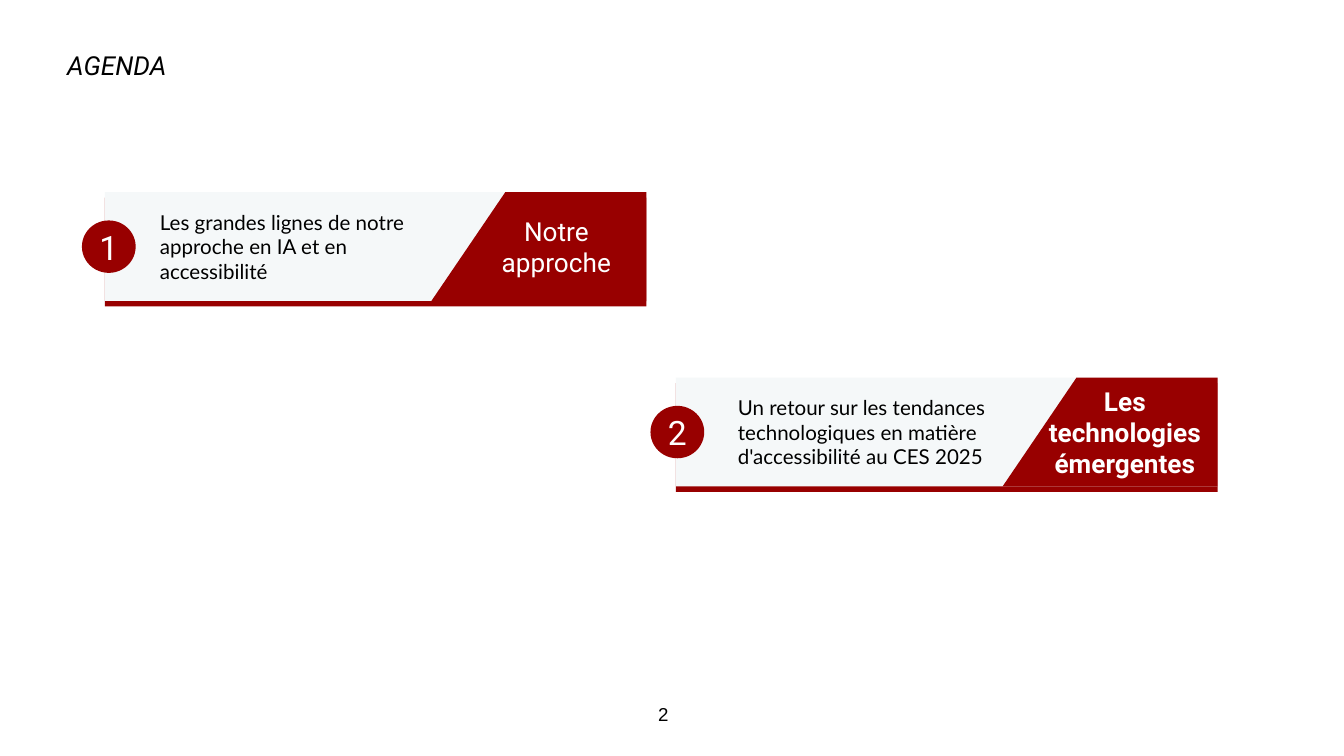
"""Build the agenda slide with two numbered banners."""
from pptx import Presentation
from pptx.dml.color import RGBColor
from pptx.enum.shapes import MSO_SHAPE as SHAPE
from pptx.enum.text import MSO_ANCHOR as ANCHOR, PP_ALIGN as ALIGN
from pptx.util import Inches, Pt

RED = RGBColor(0x98, 0x00, 0x00)
PALE = RGBColor(0xF5, 0xF8, 0xF9)
WHITE = RGBColor(0xFF, 0xFF, 0xFF)
BLACK = RGBColor(0x00, 0x00, 0x00)

TITLE = "AGENDA"
PAGE = "2"
BANNERS = [
    dict(number="1", x=0.78, y=1.43, circle_x=0.61, body_x=1.15, label_x=3.47, bold=False,
         label=["Notre approche"],
         body=["Les grandes lignes de notre approche en IA et en accessibilité"]),
    dict(number="2", x=5.03, y=2.81, circle_x=4.84, body_x=5.45, label_x=7.7, bold=True,
         label=["Les technologies", "émergentes"],
         body=["Un retour sur les tendances", "technologiques en matière",
               "d'accessibilité au CES 2025"]),
]
SLIDE_W = Inches(10)
SLIDE_H = SLIDE_W * 9 // 16
BANNER_W, BANNER_H = 4.03, 0.81
TAB_W, TAB_SLANT = 1.6, 0.55
CIRCLE_W, CIRCLE_H = 0.4, 0.39
EDGE = 0.04


def paint(sp, color):
    sp.shadow.inherit = False
    sp.fill.solid()
    sp.fill.fore_color.rgb = color
    sp.line.fill.background()


def add_block(shapes, kind, x, y, w, h, color):
    sp = shapes.add_shape(kind, Inches(x), Inches(y), Inches(w), Inches(h))
    paint(sp, color)
    return sp


def write(sp, lines, size, font, color, align=ALIGN.CENTER, anchor=ANCHOR.MIDDLE,
          bold=False, italic=False, inset=(0.04, 0.02)):
    tf = sp.text_frame
    tf.word_wrap = True
    tf.vertical_anchor = anchor
    tf.margin_left = tf.margin_right = Inches(inset[0])
    tf.margin_top = tf.margin_bottom = Inches(inset[1])
    tf.text = "\n".join(lines)
    for p in tf.paragraphs:
        p.alignment = align
        p.line_spacing = 1.0
        p.space_before = Pt(0)
        p.font.size = Pt(size)
        p.font.name = font
        p.font.bold = bold
        p.font.italic = italic
        p.font.color.rgb = color


def add_text(shapes, x, y, w, h, lines, size, font, color, **style):
    sp = shapes.add_textbox(Inches(x), Inches(y), Inches(w), Inches(h))
    write(sp, lines, size, font, color, **style)


def add_banner(shapes, b):
    x, y = b["x"], b["y"]
    right, bottom = x + BANNER_W, y + BANNER_H
    tab_x = right - TAB_W
    label_h = 0.74 if b["bold"] else 0.51
    body_h = 0.59
    add_block(shapes, SHAPE.RECTANGLE, x, y + EDGE, BANNER_W, BANNER_H, RED)
    add_block(shapes, SHAPE.RECTANGLE, x, y, BANNER_W, BANNER_H, PALE)
    corners = [(tab_x + TAB_SLANT, y), (right, y), (right, bottom), (tab_x, bottom)]
    points = [(Inches(px), Inches(py)) for px, py in corners]
    builder = shapes.build_freeform(*points[0])
    builder.add_line_segments(points[1:], close=True)
    paint(builder.convert_to_shape(), RED)
    add_text(shapes, b["label_x"], y + (BANNER_H - label_h) / 2, 1.34, label_h,
             b["label"], 14, "Roboto", WHITE, bold=b["bold"])
    add_text(shapes, b["body_x"], y + (BANNER_H - body_h) / 2, 2.06, body_h,
             b["body"], 11, "Lato", BLACK, align=ALIGN.LEFT)
    circle = add_block(shapes, SHAPE.OVAL, b["circle_x"], y + (BANNER_H - CIRCLE_H) / 2,
                       CIRCLE_W, CIRCLE_H, RED)
    write(circle, [b["number"]], 18, "Roboto", WHITE)


def main():
    prs = Presentation()
    prs.slide_width, prs.slide_height = SLIDE_W, SLIDE_H
    s = prs.slides.add_slide(prs.slide_layouts[5])
    title = s.shapes.title
    title.left, title.top = Inches(0.4), Inches(0.27)
    title.width, title.height = Inches(9.07), Inches(0.63)
    write(title, [TITLE], 14, "Roboto", BLACK, align=ALIGN.LEFT, anchor=ANCHOR.TOP,
          italic=True, inset=(0.1, 0.1))
    add_text(s.shapes, 0, 5.1, 9.87, 0.43, [PAGE], 10, "Arial", BLACK, inset=(0.1, 0.1))
    for banner in BANNERS:
        add_banner(s.shapes, banner)
    prs.save("out.pptx")


if __name__ == "__main__":
    main()
